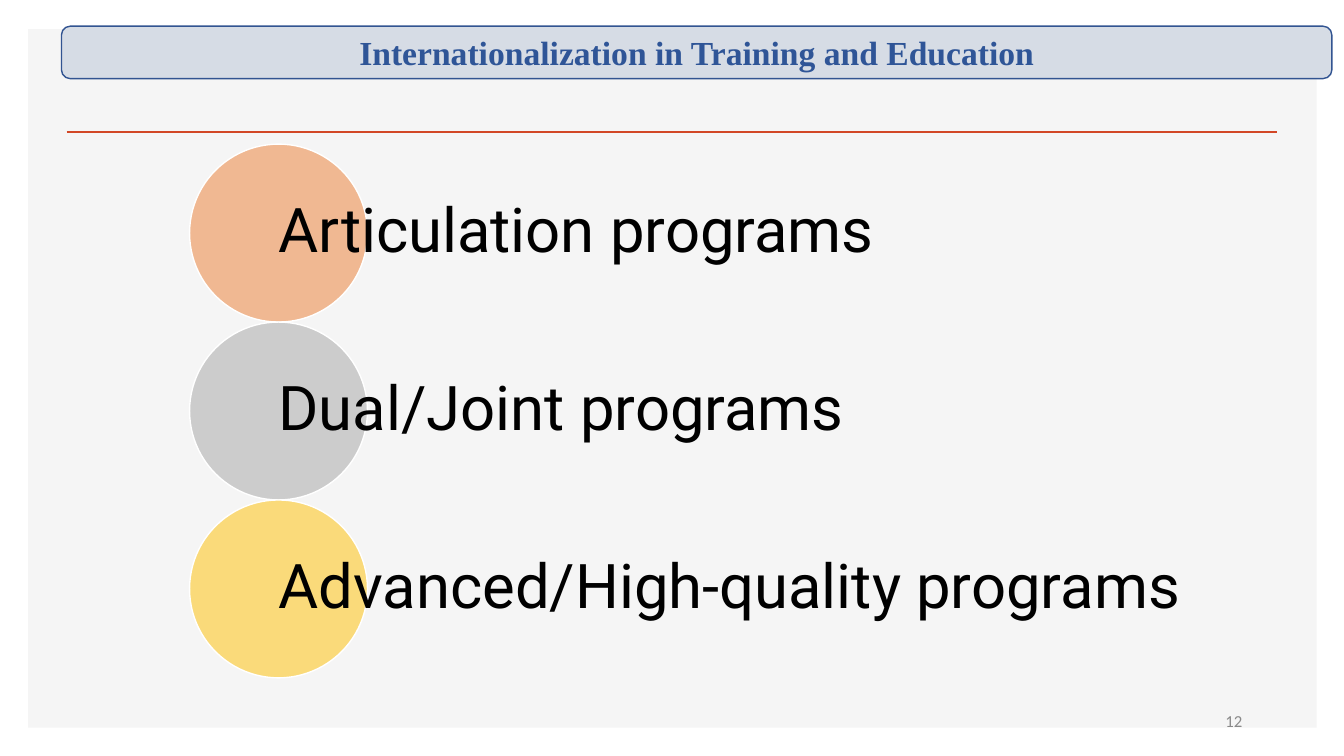
from lxml import etree
from pptx import Presentation
from pptx import util as u
from pptx.dml.color import RGBColor
from pptx.enum import shapes, text
from pptx.oxml.ns import qn

HUES = {
    "panel": "F5F5F5", "rule": "D24726", "page": "898989",
    "banner": "D6DCE5", "edge": "325491", "title": "2F5597",
    "white": "FFFFFF", "black": "000000",
}
ITEMS = [
    ("Articulation programs", "ED7D31"),
    ("Dual/Joint programs", "A5A5A5"),
    ("Advanced/High-quality programs", "FFC000"),
]
LEFT, TOP, ROW = 1.88, 1.43, 1.765
BANNER = (0.61, 0.26, 12.6, 0.52)
LINE = 46  # text line height in points


def rgb(code):
    return RGBColor.from_string(code)


def inch(*nums):
    return [u.Inches(n) for n in nums]


def draw(slide, kind, box, fill, edge=None):
    shape = slide.shapes.add_shape(kind, *inch(*box))
    shape.shadow.inherit = False
    shape.fill.solid()
    shape.fill.fore_color.rgb = rgb(fill)
    if edge:
        shape.line.color.rgb = rgb(edge)
        shape.line.width = u.Pt(1)
    else:
        shape.line.fill.background()
    return shape


def fade(shape, share):
    """Make the solid fill partly transparent; share is its opacity in percent."""
    color = shape.fill._xPr.find(qn("a:solidFill"))[0]
    etree.SubElement(color, qn("a:alpha")).set("val", str(share * 1000))


def rule(slide, x, y, end):
    line = slide.shapes.add_connector(
        shapes.MSO_CONNECTOR.STRAIGHT, *inch(x, y, end, y))
    line.line.color.rgb = rgb(HUES["rule"])
    line.line.width = u.Pt(2)
    etree.SubElement(line._element.spPr, qn("a:effectLst"))


def place(shape, box, pad=0):
    """Position a text shape and centre its text vertically."""
    shape.left, shape.top, shape.width, shape.height = inch(*box)
    frame = shape.text_frame
    frame.word_wrap = True
    frame.auto_size = text.MSO_AUTO_SIZE.NONE
    frame.vertical_anchor = text.MSO_ANCHOR.MIDDLE
    frame.margin_left = frame.margin_right = u.Inches(pad)
    frame.margin_top = frame.margin_bottom = u.Inches(0.05)
    return frame


def style(para, face, size, hue, align, bold=False):
    para.alignment = align
    font = para.font
    font.name, font.size, font.bold = face, u.Pt(size), bold
    font.color.rgb = rgb(HUES[hue])


def head(slide):
    draw(slide, shapes.MSO_SHAPE.ROUNDED_RECTANGLE, BANNER,
         HUES["banner"], HUES["edge"])
    title = slide.shapes.title
    slide.shapes._spTree.append(title._element)
    frame = place(title, BANNER, 0.11)
    frame.text = "Internationalization in Training and Education"
    style(frame.paragraphs[0], "Times New Roman", 24, "title",
          text.PP_ALIGN.CENTER, True)


def items(slide):
    for row, (_, hue) in enumerate(ITEMS):
        box = (LEFT, TOP + row * ROW, ROW, ROW)
        fade(draw(slide, shapes.MSO_SHAPE.OVAL, box, hue, HUES["white"]), 50)
    body = slide.placeholders[1]
    slide.shapes._spTree.append(body._element)
    frame = place(body, (LEFT + ROW / 2, TOP, 9.41, ROW * len(ITEMS)))
    frame.text = "\n".join(label for label, _ in ITEMS)
    for row, para in enumerate(frame.paragraphs):
        props = para._p.get_or_add_pPr()
        props.set("marL", "0")
        props.set("indent", "0")
        etree.SubElement(props, qn("a:buNone"))
        para.line_spacing = u.Pt(LINE)
        para.space_before = u.Pt(ROW * 72 - LINE if row else 0)
        style(para, "Roboto", 44, "black", text.PP_ALIGN.LEFT)


def page(slide):
    box = (9.42, 6.95, 3, 0.4)
    frame = place(slide.shapes.add_textbox(*inch(*box)), box, 0.1)
    frame.text = "12"
    style(frame.paragraphs[0], "Calibri", 12, "page", text.PP_ALIGN.RIGHT)


def main():
    prs = Presentation()
    prs.slide_width, prs.slide_height = inch(13.33, 7.5)
    slide = prs.slides.add_slide(prs.slide_layouts[1])
    draw(slide, shapes.MSO_SHAPE.RECTANGLE, (0.28, 0.29, 12.78, 6.93),
         HUES["panel"])
    rule(slide, 0.66, 1.31, 12.67)
    page(slide)
    head(slide)
    items(slide)
    prs.save("out.pptx")


if __name__ == "__main__":
    main()
